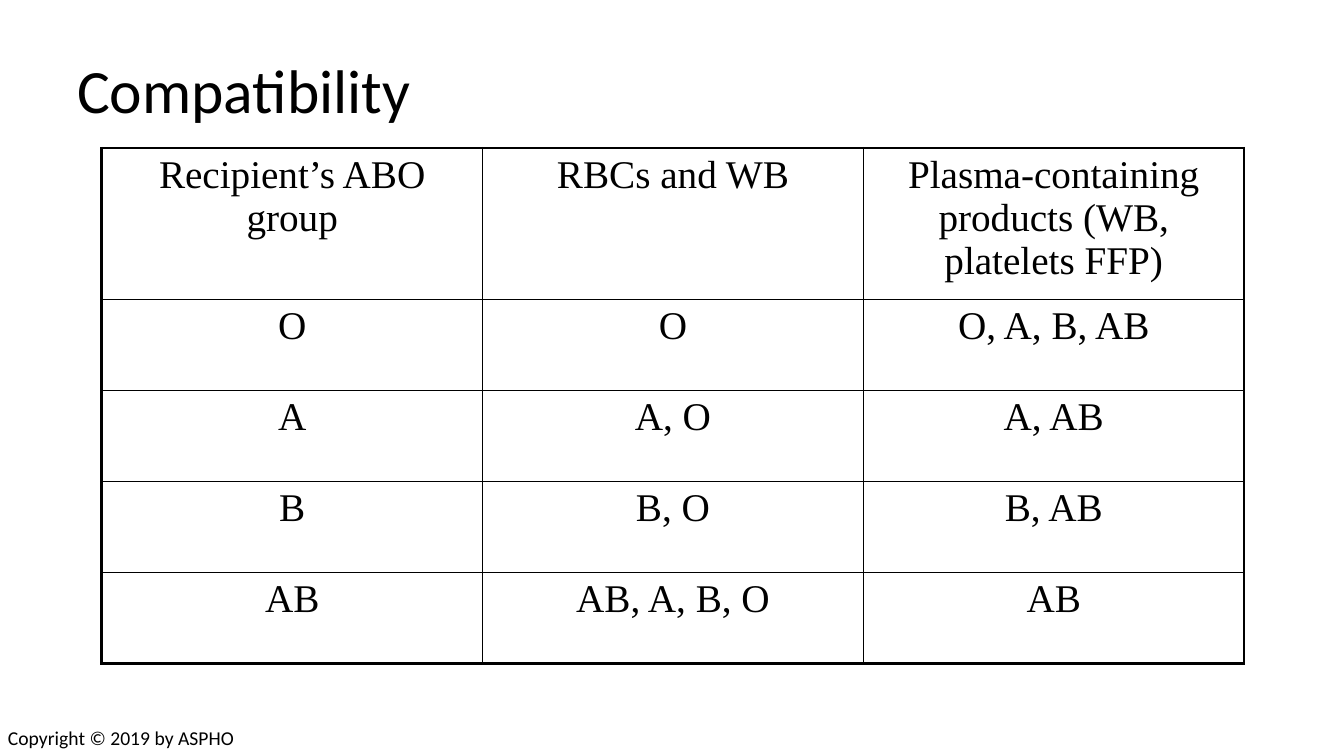
from lxml.etree import SubElement
from pptx import Presentation
from pptx.dml.color import RGBColor
from pptx.enum.text import MSO_ANCHOR, PP_ALIGN
from pptx.oxml.ns import qn
from pptx.util import Pt

COMPATIBILITY = [
    ["Recipient’s ABO group", "RBCs and WB",
     "Plasma-containing products (WB, platelets FFP)"],
    ["O", "O", "O, A, B, AB"],
    ["A", "A, O", "A, AB"],
    ["B", "B, O", "B, AB"],
    ["AB", "AB, A, B, O", "AB"],
]


def color(value):
    return RGBColor.from_string(value)


class SlideBuilder:
    ink = "000000"
    paper = "FFFFFF"
    heading_font = "Calibri"
    table_font = "Times New Roman"
    outer_line, inner_line = 2.25, 1

    def __init__(self, slide):
        self.slide = slide

    def add_words(self, frame, text, font, size, **layout):
        paragraph = frame.paragraphs[0]
        run = paragraph.add_run()
        run.text = text
        for name, value in {"name": font, "size": Pt(size)}.items():
            setattr(run.font, name, value)
        run.font.color.rgb = color(self.ink)
        for name, value in layout.items():
            setattr(paragraph, name, value)

    def text(self, text, left, top, width, height, size,
             anchor=MSO_ANCHOR.TOP, **layout):
        box = self.slide.shapes.add_textbox(
            Pt(left), Pt(top), Pt(width), Pt(height))
        frame = box.text_frame
        for name, value in {"word_wrap": True,
                            "vertical_anchor": anchor}.items():
            setattr(frame, name, value)
        self.add_words(frame, text, self.heading_font, size, **layout)

    def border(self, cell, side, width):
        line = SubElement(cell._tc.get_or_add_tcPr(), qn(f"a:ln{side}"),
                          w=str(Pt(width)))
        fill = SubElement(line, qn("a:solidFill"))
        SubElement(fill, qn("a:srgbClr"), val=self.ink)

    def table(self, rows, left, top, column_width, heights):
        row_count, column_count = len(rows), len(rows[0])
        table = self.slide.shapes.add_table(
            row_count, column_count, Pt(left), Pt(top),
            Pt(column_width * column_count), Pt(sum(heights))).table
        for name in ("first_row", "horz_banding"):
            setattr(table, name, False)
        for column in table.columns:
            column.width = Pt(column_width)
        for r, (values, height) in enumerate(zip(rows, heights)):
            table.rows[r].height = Pt(height)
            for c, value in enumerate(values):
                cell = table.cell(r, c)
                margins = {"margin_left": 9.6, "margin_right": 9.6,
                           "margin_top": 3.6, "margin_bottom": 3.6}
                for name, margin in margins.items():
                    setattr(cell, name, Pt(margin))
                self.add_words(cell.text_frame, value, self.table_font, 28,
                               alignment=PP_ALIGN.CENTER)
                # Heavy frame outside, thin grid inside
                outside = {"L": c == 0, "R": c == column_count - 1,
                           "T": r == 0, "B": r == row_count - 1}
                for side, is_outer in outside.items():
                    self.border(cell, side, self.outer_line if is_outer
                                else self.inner_line)
                cell.fill.solid()
                cell.fill.fore_color.rgb = color(self.paper)


def main():
    deck = Presentation()
    deck.slide_width, deck.slide_height = Pt(960), Pt(540)
    builder = SlideBuilder(deck.slides.add_slide(deck.slide_layouts[6]))

    # Title
    builder.text("Compatibility", 48, 21.6, 864, 90, 44,
                 anchor=MSO_ANCHOR.MIDDLE, line_spacing=0.9)

    # Compatible products for each recipient group
    builder.table(COMPATIBILITY, 72.7, 105.8, 272, [101] + [65] * 4)

    # Copyright line
    builder.text("Copyright © 2019 by ASPHO", -1.4, 514.8, 244.8, 24.2, 14)

    deck.save("out.pptx")


if __name__ == "__main__":
    main()
